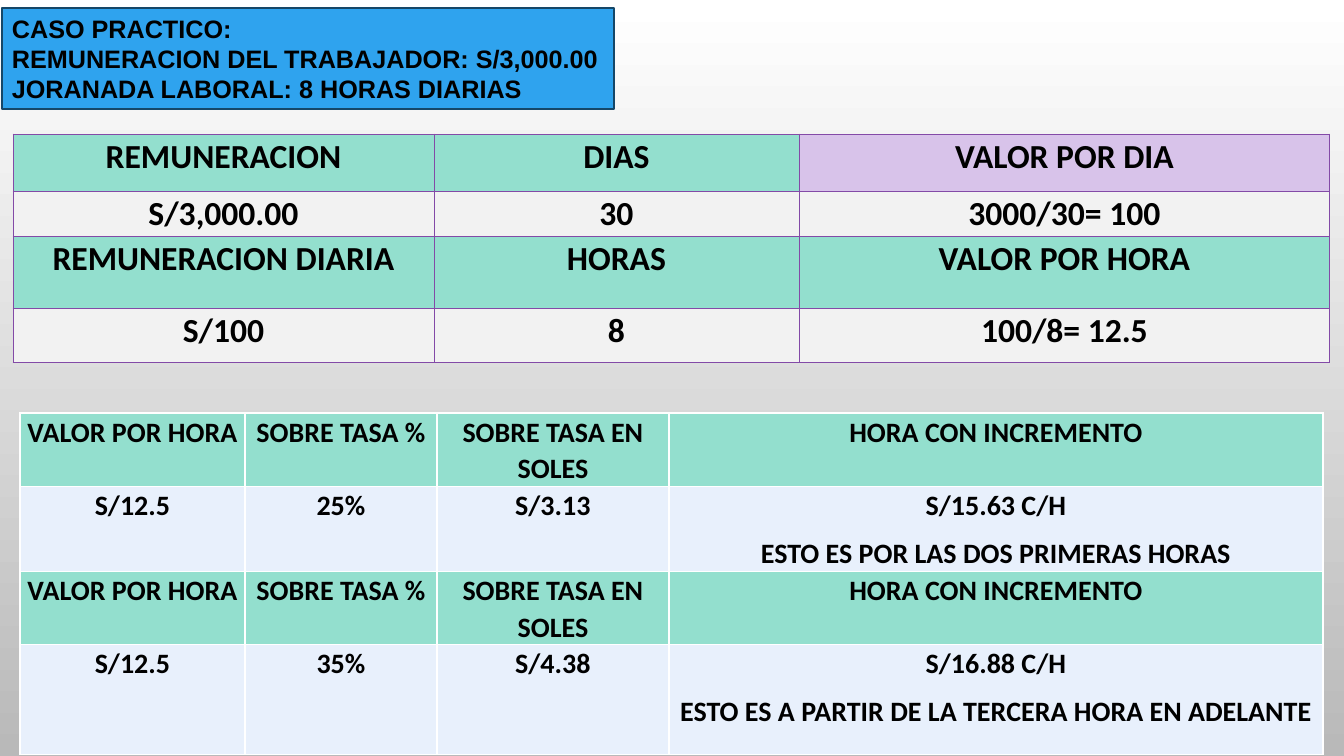
from lxml import etree
from pptx import Presentation
from pptx import util as u
from pptx.dml.color import RGBColor
from pptx.enum import shapes, text
from pptx.oxml import ns

PX = 914400 / 100.8
BLACK = RGBColor(0, 0, 0)
WHITE = RGBColor(0xFF, 0xFF, 0xFF)
GREY = RGBColor(0xB9, 0xB9, 0xB9)
MINT = RGBColor(0x93, 0xDF, 0xCE)
LILAC = RGBColor(0xD8, 0xC3, 0xEA)
PALE_GREY = RGBColor(0xF2, 0xF2, 0xF2)
PALE_BLUE = RGBColor(0xE8, 0xF0, 0xFC)
PURPLE = RGBColor(0x83, 0x4A, 0xA7)
BLUE = RGBColor(0x2F, 0xA3, 0xEE)
NAVY = RGBColor(0x15, 0x47, 0x68)


def px(*values):
    return [u.Emu(round(value * PX)) for value in values]


def write(frame, content, size, font, align, spacing=None, after=None):
    for index, line in enumerate(content.split("\n")):
        para = frame.add_paragraph() if index else frame.paragraphs[0]
        para.alignment = align
        para.line_spacing = spacing
        para.space_after = after
        span = para.add_run()
        span.text = line
        span.font.size = u.Pt(size)
        span.font.name = font
        span.font.bold = True
        span.font.color.rgb = BLACK


deck = Presentation()
deck.slide_width, deck.slide_height = px(1344, 756)
page = deck.slides.add_slide(deck.slide_layouts[6])

# Background, white at the top to grey at the bottom
backdrop = page.background.fill
backdrop.gradient()
backdrop.gradient_angle = 270
for stop, colour, position in zip(backdrop.gradient_stops, (WHITE, GREY), (0, 1)):
    stop.color.rgb = colour
    stop.position = position

# Tables: heading rows alternate with value rows
day_rows = [
    ["REMUNERACION", "DIAS", "VALOR POR DIA"],
    ["S/3,000.00", "30", "3000/30= 100"],
    ["REMUNERACION DIARIA", "HORAS", "VALOR POR HORA"],
    ["S/100", "8", "100/8= 12.5"],
]
overtime_heads = ["VALOR POR HORA", "SOBRE TASA %", "SOBRE TASA EN SOLES",
                  "HORA CON INCREMENTO"]
overtime_rows = [
    overtime_heads,
    ["S/12.5", "25%", "S/3.13",
     "S/15.63 C/H\nESTO ES POR LAS DOS PRIMERAS HORAS"],
    overtime_heads,
    ["S/12.5", "35%", "S/4.38",
     "S/16.88 C/H\nESTO ES A PARTIR DE LA TERCERA HORA EN ADELANTE"],
]
# left, top, column widths, row heights, rows, size, value fill, border, border width
tables = [
    (13, 134, (421, 365, 531), (57, 45, 72, 55), day_rows,
     24, PALE_GREY, PURPLE, 0.75),
    (20, 413, (225, 192, 232, 654), (73, 85, 73, 110), overtime_rows,
     20, PALE_BLUE, WHITE, 1),
]
for left, top, widths, heights, rows, size, value_fill, border, weight in tables:
    table = page.shapes.add_table(
        len(rows), len(widths), *px(left, top, sum(widths), sum(heights))).table
    table.first_row = table.horz_banding = False
    for column, width in zip(table.columns, px(*widths)):
        column.width = width
    for row, height in zip(table.rows, px(*heights)):
        row.height = height
    for row_index, row in enumerate(rows):
        for column_index, content in enumerate(row):
            cell = table.cell(row_index, column_index)
            cell.margin_left, cell.margin_right = px(5, 5)
            cell.margin_top = cell.margin_bottom = 0
            properties = cell._tc.get_or_add_tcPr()
            for side in ("a:lnL", "a:lnR", "a:lnT", "a:lnB"):
                edge = etree.SubElement(properties, ns.qn(side), w=str(u.Pt(weight)))
                paint = etree.SubElement(edge, ns.qn("a:solidFill"))
                etree.SubElement(paint, ns.qn("a:srgbClr"), val=str(border))
            cell.fill.solid()
            cell.fill.fore_color.rgb = value_fill if row_index % 2 else MINT
            write(cell.text_frame, content, size, "Calibri",
                  text.PP_ALIGN.CENTER, spacing=1.07, after=u.Pt(8))
    if rows is day_rows:
        highlight = table.cell(0, 2).fill
        highlight.fore_color.rgb = LILAC

# Case box
box = page.shapes.add_shape(shapes.MSO_SHAPE.RECTANGLE, *px(2, 8, 612, 101))
box.shadow.inherit = False
box.fill.solid()
box.fill.fore_color.rgb = BLUE
box.line.color.rgb = NAVY
box.line.width = u.Pt(1.25)
box.text_frame.word_wrap = True
box.text_frame.vertical_anchor = text.MSO_ANCHOR.MIDDLE
write(box.text_frame,
      "CASO PRACTICO:\nREMUNERACION DEL TRABAJADOR: S/3,000.00\n"
      "JORANADA LABORAL: 8 HORAS DIARIAS",
      18, "Arial", text.PP_ALIGN.LEFT)

deck.save("out.pptx")
